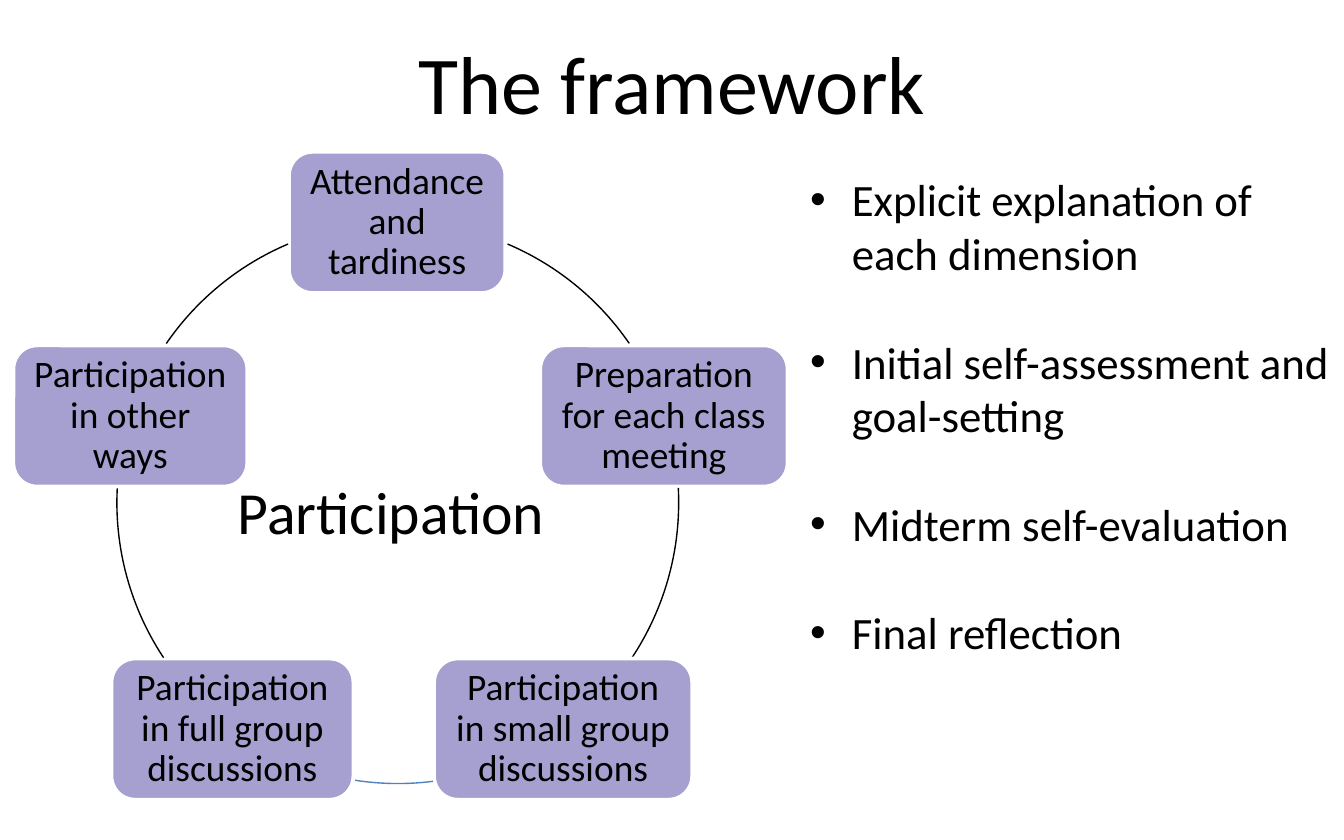
from typing import NamedTuple

from lxml.etree import SubElement
from pptx import Presentation
from pptx.dml.color import RGBColor
from pptx.enum.shapes import MSO_SHAPE
from pptx.enum.text import MSO_ANCHOR, PP_ALIGN
from pptx.oxml.ns import qn
from pptx.util import Emu, Pt

BLACK = RGBColor(0x00, 0x00, 0x00)
WHITE = RGBColor(0xFF, 0xFF, 0xFF)
LILAC = RGBColor(0xA5, 0xA0, 0xCF)
BLUE = RGBColor(0x4F, 0x81, 0xBD)
FONT = "Calibri"
SCALE = 9144  # EMU in one px, 100 px to the inch
NODE_H = 105
RING = (87, 165, 418, 418)
INDENT = 31


class Node(NamedTuple):
    left: int
    top: int
    width: int
    text: str


class Arc(NamedTuple):
    start: float  # degrees, clockwise from the right
    end: float
    color: RGBColor = BLACK


NODES = [
    Node(215, 113, 161, "Attendance and tardiness"),
    Node(402, 257, 184, "Preparation for each class meeting"),
    Node(323, 490, 192, "Participation in small group discussions"),
    Node(83, 490, 180, "Participation in full group discussions"),
    Node(10, 257, 174, "Participation in other ways"),
]
ARCS = [
    Arc(293, 325.5),
    Arc(357, 33.5),
    Arc(82.8, 99.1, BLUE),
    Arc(146.5, 183),
    Arc(214.5, 247),
]
STEPS = [
    "Explicit explanation of each dimension",
    "Initial self-assessment and goal-setting",
    "Midterm self-evaluation",
    "Final reflection",
]


def px(count: int) -> Emu:
    return Emu(count * SCALE)


def add_run(para, text: str, size: int) -> None:
    run = para.add_run()
    run.text = text
    run.font.name = FONT
    run.font.size = Pt(size)
    run.font.color.rgb = BLACK


def add_box(slide, left: int, top: int, width: int, height: int):
    """Add an empty wrapping text box and return its frame."""
    box = slide.shapes.add_textbox(px(left), px(top), px(width), px(height))
    box.text_frame.word_wrap = True
    return box.text_frame


def add_node(slide, node: Node) -> None:
    shape = slide.shapes.add_shape(
        MSO_SHAPE.ROUNDED_RECTANGLE,
        px(node.left), px(node.top), px(node.width), px(NODE_H),
    )
    shape.shadow.inherit = False
    shape.fill.solid()
    shape.fill.fore_color.rgb = LILAC
    shape.line.color.rgb = WHITE
    shape.line.width = Pt(2)
    frame = shape.text_frame
    frame.word_wrap = True
    frame.vertical_anchor = MSO_ANCHOR.MIDDLE
    frame.margin_left = frame.margin_right = px(8)
    frame.margin_top = frame.margin_bottom = px(8)
    para = frame.paragraphs[0]
    para.alignment = PP_ALIGN.CENTER
    para.line_spacing = 0.9
    add_run(para, node.text, 20)


def add_arc(slide, arc: Arc) -> None:
    shape = slide.shapes.add_shape(MSO_SHAPE.ARC, *map(px, RING))
    shape.shadow.inherit = False
    # Angles are stored in 1/60000 degree, adjustments in 1/100000
    shape.adjustments[0] = arc.start * 0.6
    shape.adjustments[1] = arc.end * 0.6
    shape.fill.background()
    shape.line.color.rgb = arc.color
    shape.line.width = Pt(0.75)


def add_steps(slide) -> None:
    frame = add_box(slide, 593, 82, 415, 414)
    frame.margin_top = px(46)
    for pos, step in enumerate(STEPS):
        para = frame.add_paragraph() if pos else frame.paragraphs[0]
        props = para._p.get_or_add_pPr()
        props.set("marL", str(px(INDENT)))
        props.set("indent", str(px(-INDENT)))
        if pos:
            para.space_before = Pt(29.3)
        SubElement(props, qn("a:buFont"), typeface="Arial")
        SubElement(props, qn("a:buChar"), char="•")
        add_run(para, step, 24)


def main() -> None:
    deck = Presentation()
    deck.slide_width, deck.slide_height = px(1000), px(625)
    slide = deck.slides.add_slide(deck.slide_layouts[6])

    title = add_box(slide, 50, 9, 900, 104)
    title.vertical_anchor = MSO_ANCHOR.MIDDLE
    title.paragraphs[0].alignment = PP_ALIGN.CENTER
    add_run(title.paragraphs[0], "The framework", 44)

    add_steps(slide)
    for node, arc in zip(NODES, ARCS):
        add_node(slide, node)
        add_arc(slide, arc)

    label = add_box(slide, 167, 348, 262, 64)
    add_run(label.paragraphs[0], "Participation", 32)
    deck.save("out.pptx")


if __name__ == "__main__":
    main()
